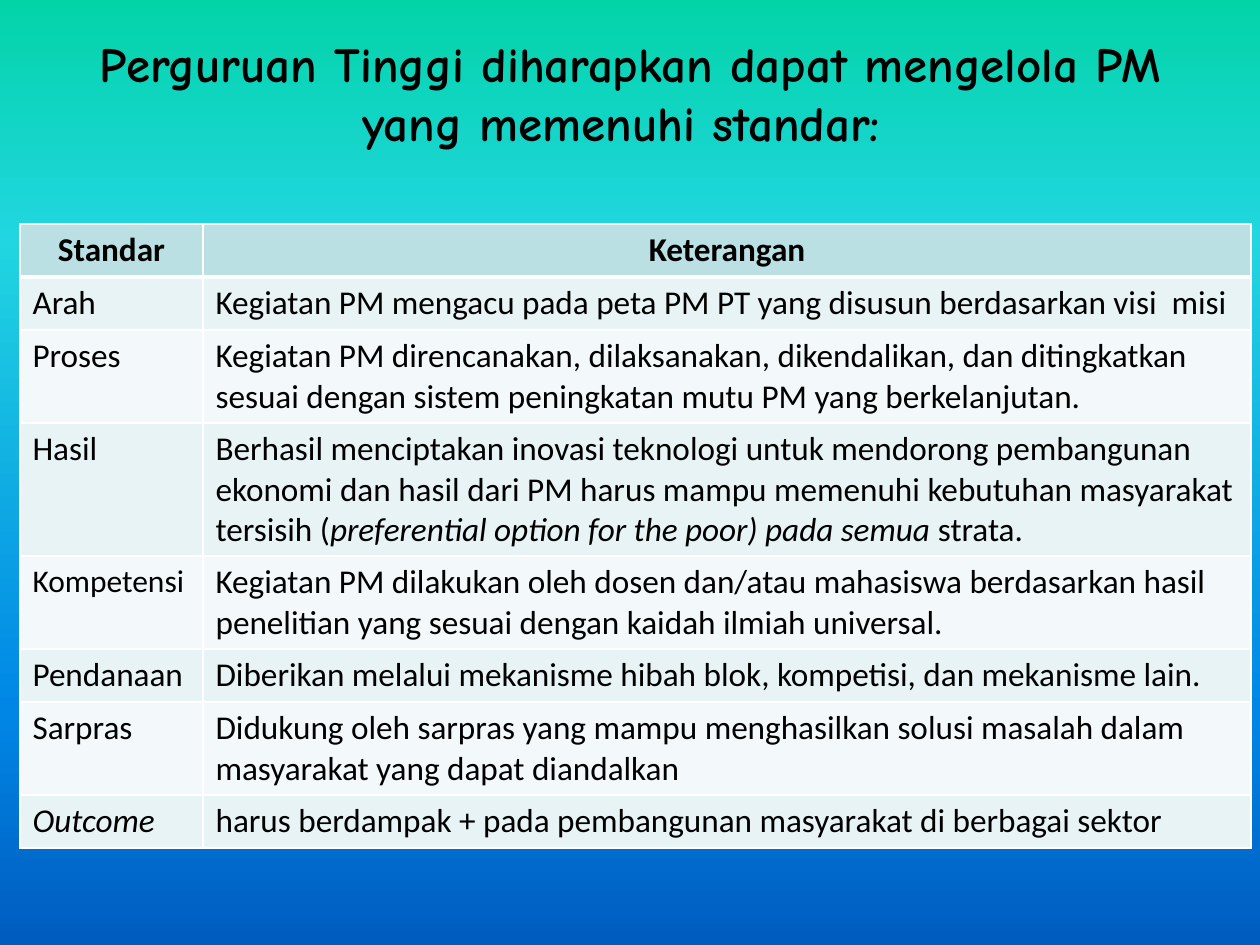
from dataclasses import dataclass

from lxml import etree
from pptx import Presentation
from pptx.dml.color import RGBColor
from pptx.enum.text import MSO_ANCHOR, PP_ALIGN
from pptx.oxml.ns import qn
from pptx.util import Emu, Pt

LEFT, CENTER = PP_ALIGN.LEFT, PP_ALIGN.CENTER
MIDDLE = MSO_ANCHOR.MIDDLE

BLACK = RGBColor(0x00, 0x00, 0x00)
WHITE = RGBColor(0xFF, 0xFF, 0xFF)
HEAD = RGBColor(0xBB, 0xE0, 0xE3)
BANDS = (RGBColor(0xE7, 0xF3, 0xF4), RGBColor(0xF3, 0xF9, 0xFA))
STOPS = (
    (0, RGBColor(0x03, 0xD4, 0xA8)),
    (25, RGBColor(0x21, 0xD6, 0xE0)),
    (75, RGBColor(0x00, 0x87, 0xE6)),
    (100, RGBColor(0x00, 0x5C, 0xBF)),
)
COLS = (183, 1048)
ROW, LINE = 53, 40


@dataclass
class Item:
    name: str
    text: str
    lines: int = 1
    size: int = 19
    slant: bool = False
    phrase: str = ""
    tail: str = ""


ITEMS = (
    Item("Arah", "Kegiatan PM mengacu pada peta PM PT yang disusun berdasarkan visi  misi"),
    Item("Proses", "Kegiatan PM direncanakan, dilaksanakan, dikendalikan, dan ditingkatkan "
         "sesuai dengan sistem peningkatan mutu PM yang berkelanjutan.", 2),
    Item("Hasil", "Berhasil menciptakan inovasi teknologi untuk mendorong pembangunan "
         "ekonomi dan hasil dari PM harus mampu memenuhi kebutuhan masyarakat tersisih (", 3,
         phrase="preferential option for the poor) pada semua ", tail="strata."),
    Item("Kompetensi", "Kegiatan PM dilakukan oleh dosen dan/atau mahasiswa berdasarkan hasil "
         "penelitian yang sesuai dengan kaidah ilmiah universal.", 2, size=18),
    Item("Pendanaan", "Diberikan melalui mekanisme hibah blok, kompetisi, dan mekanisme lain."),
    Item("Sarpras", "Didukung oleh sarpras yang mampu menghasilkan solusi masalah dalam "
         "masyarakat yang dapat diandalkan", 2),
    Item("Outcome", "harus berdampak + pada pembangunan masyarakat di berbagai sektor", slant=True),
)


def px(n: int) -> Emu:
    return Emu(round(n * 914400 / 126))


def write(frame, text: str, *, size=19, font="Calibri", bold=False, slant=False, align=LEFT) -> None:
    para = frame.paragraphs[0]
    para.alignment = align
    run = para.add_run()
    run.text = text
    run.font.size = Pt(size)
    run.font.name = font
    run.font.bold = bold
    run.font.italic = slant
    run.font.color.rgb = BLACK


def tint(node, color: RGBColor) -> None:
    etree.SubElement(node, qn("a:srgbClr"), val=str(color))


def paint(slide) -> None:
    fill = slide.background.fill
    fill.gradient()
    fill.gradient_angle = 270
    stops = next(slide.element.iter(qn("a:gsLst")))
    for old in list(stops):
        stops.remove(old)
    for pos, color in STOPS:
        tint(etree.SubElement(stops, qn("a:gs"), pos=str(pos * 1000)), color)


def style(cell, color: RGBColor, top: int, base: int) -> None:
    props = cell._tc.get_or_add_tcPr()
    for side, width in (("L", 1), ("R", 1), ("T", top), ("B", base)):
        line = etree.SubElement(props, qn(f"a:ln{side}"), w=str(Pt(width)))
        tint(etree.SubElement(line, qn("a:solidFill")), WHITE)
    cell.fill.solid()
    cell.fill.fore_color.rgb = color


def title(slide) -> None:
    box = slide.shapes.add_textbox(px(63), px(38), px(1134), px(157))
    frame = box.text_frame
    frame.word_wrap = True
    frame.vertical_anchor = MIDDLE
    frame.margin_top = px(0)
    frame.margin_bottom = px(49)
    write(frame, "Perguruan Tinggi diharapkan dapat mengelola PM yang memenuhi standar: ",
          size=28, font="Comic Neue", bold=True, align=CENTER)


def grid(slide) -> None:
    tall = [ROW] + [ROW + LINE * (item.lines - 1) for item in ITEMS]
    table = slide.shapes.add_table(len(tall), len(COLS), px(20), px(224),
                                   px(sum(COLS)), px(sum(tall))).table
    for col, width in zip(table.columns, COLS):
        col.width = px(width)
    for row, height in zip(table.rows, tall):
        row.height = px(height)
    for cell, text in zip(table.rows[0].cells, ("Standar", "Keterangan")):
        style(cell, HEAD, 1, 3)
        write(cell.text_frame, text, bold=True, align=CENTER)
    for i, item in enumerate(ITEMS):
        name, note = table.rows[i + 1].cells
        for cell in (name, note):
            style(cell, BANDS[i % 2], 1 if i else 3, 1)
        write(name.text_frame, item.name, size=item.size, slant=item.slant)
        write(note.text_frame, item.text)
        if item.phrase:
            write(note.text_frame, item.phrase, slant=True)
            write(note.text_frame, item.tail)


def main() -> None:
    deck = Presentation()
    deck.slide_width, deck.slide_height = px(1260), px(945)
    slide = deck.slides.add_slide(deck.slide_layouts[6])
    paint(slide)
    title(slide)
    grid(slide)
    deck.save("out.pptx")


if __name__ == "__main__":
    main()
